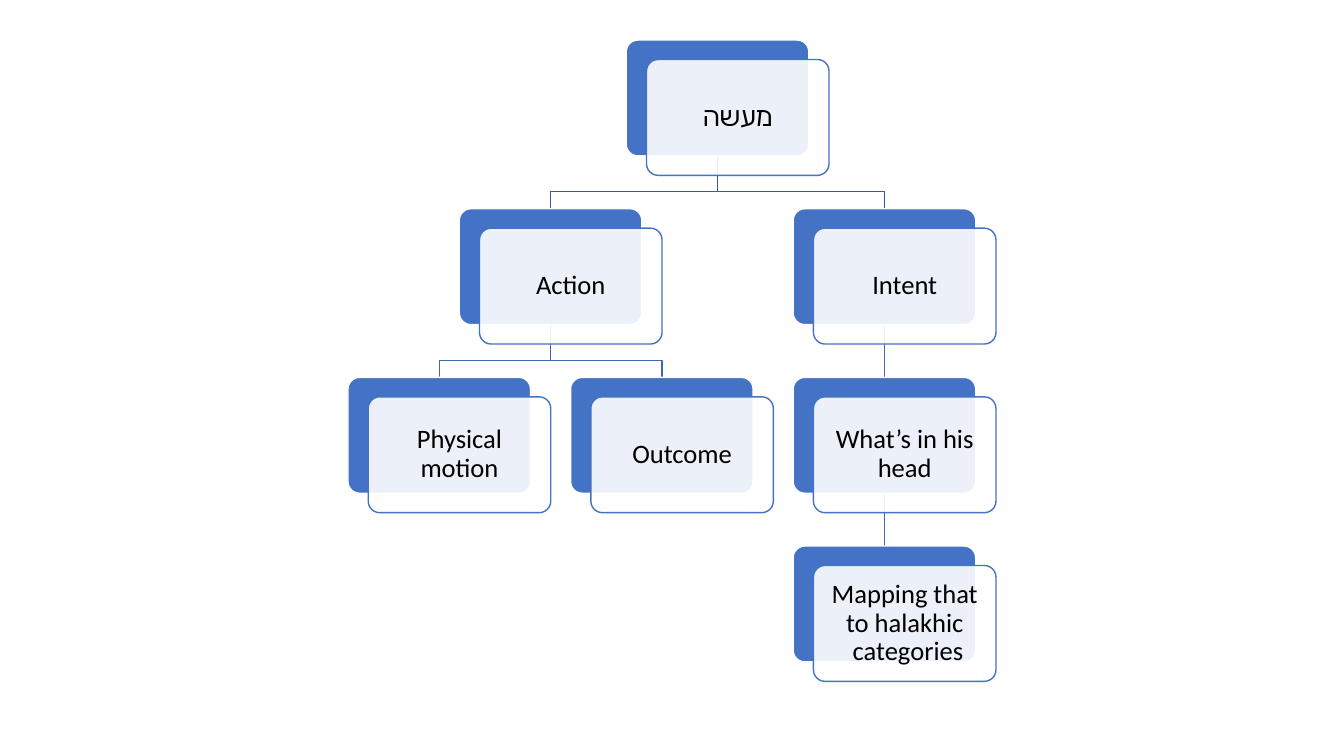
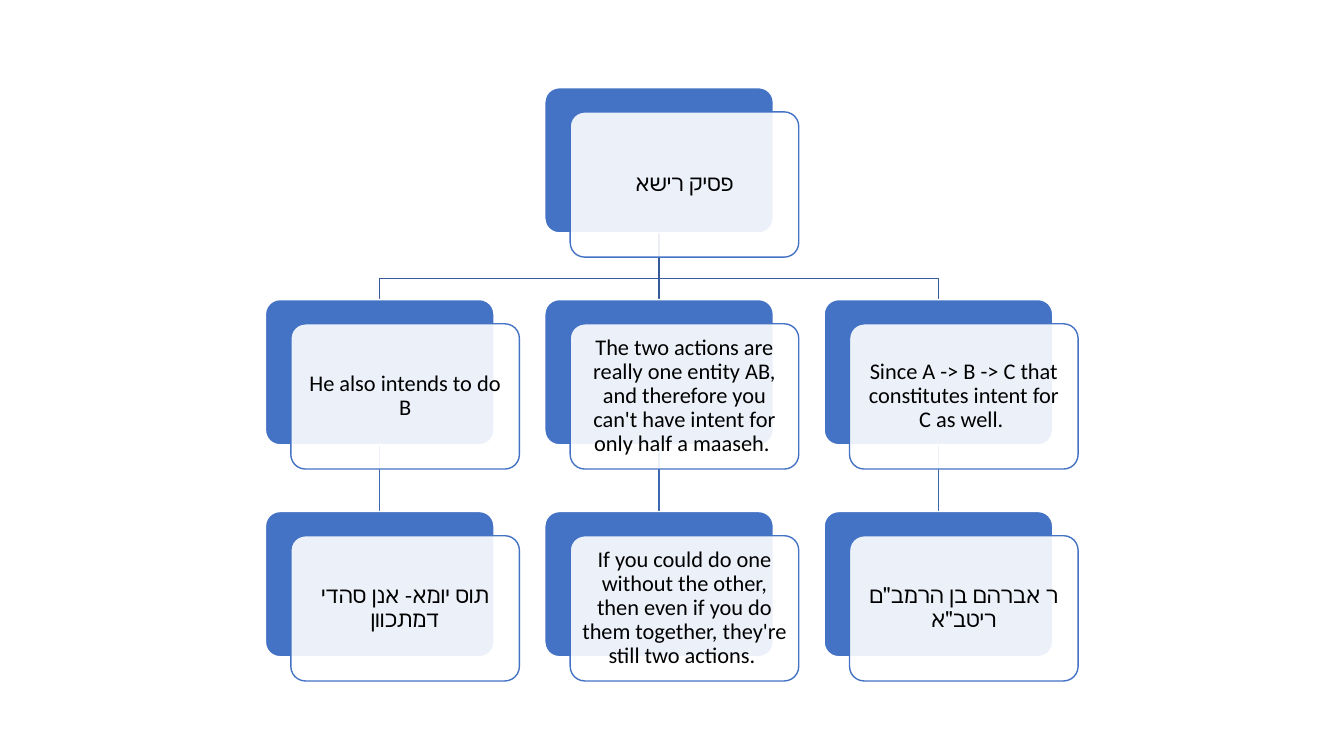
from dataclasses import dataclass
from itertools import count
from typing import Iterator

from pptx import Presentation, util as u
from pptx.dml.color import RGBColor
from pptx.enum import shapes, text
from pptx.oxml import parse_xml
from pptx.oxml.ns import nsdecls, qn

BLUE, WHITE, BLACK = "4472C4", "FFFFFF", "000000"
ROOT_LINK, LOWER_LINK = "365B9D", "3E67B2"
FONT = "Calibri"
BEND = 0.68  # where a link turns, as a share of the gap between rows


@dataclass(frozen=True)
class Node:
    text: str
    children: tuple["Node", ...] = ()


@dataclass(frozen=True)
class Tree:
    """One hierarchy with its measures in centimetres and text size in points."""
    root: Node
    left: float
    top: float
    column_step: float
    row_step: float
    card_width: float
    card_height: float
    shift_x: float
    shift_y: float
    inset: float
    text_size: float
    right_to_left: bool = False


def colour(value: str) -> RGBColor:
    return RGBColor.from_string(value)


def write(shape, words: str, *, size: float, inset: float, right_to_left: bool) -> None:
    frame = shape.text_frame
    frame.word_wrap = True
    frame.vertical_anchor = text.MSO_ANCHOR.MIDDLE
    frame.margin_left = frame.margin_right = u.Cm(inset)
    frame.margin_top = frame.margin_bottom = u.Cm(inset)
    paragraph = frame.paragraphs[0]
    paragraph.text = words
    paragraph.alignment = text.PP_ALIGN.CENTER
    paragraph.line_spacing = 0.9
    if right_to_left:
        paragraph._p.get_or_add_pPr().set("rtl", "1")
    for run in paragraph.runs:
        run.font.name = FONT
        run.font.size = u.Pt(size)
        run.font.color.rgb = colour(BLACK)


def add_card(slide, tree: Tree, left: int, top: int, fill: str, line: str):
    card = slide.shapes.add_shape(
        shapes.MSO_SHAPE.ROUNDED_RECTANGLE, left, top,
        u.Cm(tree.card_width), u.Cm(tree.card_height))
    card.adjustments[0] = 0.1
    card.shadow.inherit = False
    card.fill.solid()
    card.fill.fore_color.rgb = colour(fill)
    card.line.color.rgb = colour(line)
    card.line.width = u.Pt(1)
    return card


def add_node(slide, tree: Tree, words: str, left: int, top: int):
    """Draw a blue card under a translucent text card; return the blue one."""
    back = add_card(slide, tree, left, top, BLUE, WHITE)
    front = add_card(slide, tree, left + u.Cm(tree.shift_x),
                     top + u.Cm(tree.shift_y), WHITE, BLUE)
    fill = front.element.spPr.find(qn("a:solidFill"))
    fill[0].append(parse_xml(f'<a:alpha {nsdecls("a")} val="90000"/>'))
    write(front, words, size=tree.text_size, inset=tree.inset,
          right_to_left=tree.right_to_left)
    return back


def add_link(slide, parent, child, line: str) -> None:
    """Join parent to child behind all cards, bending if they are not aligned."""
    start_x = parent.left + parent.width // 2
    start_y = parent.top + parent.height
    end_x = child.left + child.width // 2
    if start_x == end_x:
        link = slide.shapes.add_connector(
            shapes.MSO_CONNECTOR.STRAIGHT, start_x, start_y, end_x, child.top)
        link.begin_connect(parent, 2)
        link.end_connect(child, 0)
        link.element.spPr.append(parse_xml(f'<a:effectLst {nsdecls("a")}/>'))
    else:
        bend_y = start_y + round((child.top - start_y) * BEND)
        builder = slide.shapes.build_freeform(start_x, start_y)
        builder.add_line_segments(
            [(start_x, bend_y), (end_x, bend_y), (end_x, child.top)], close=False)
        link = builder.convert_to_shape()
        link.fill.background()
        link.shadow.inherit = False
    link.line.color.rgb = colour(line)
    link.line.width = u.Pt(1)
    link.element.getparent().insert(2, link.element)


def add_branch(slide, tree: Tree, node: Node, columns: Iterator[int], row: int = 0):
    """Give each leaf the next column and centre each parent over its children."""
    children = [add_branch(slide, tree, child, columns, row + 1)
                for child in node.children]
    if children:
        left = (children[0].left + children[-1].left) // 2
    else:
        left = u.Cm(tree.left + next(columns) * tree.column_step)
    card = add_node(slide, tree, node.text, left, u.Cm(tree.top + row * tree.row_step))
    for child in children:
        add_link(slide, card, child, LOWER_LINK if row else ROOT_LINK)
    return card


DEED = Node("מעשה", (
    Node("Action", (Node("Physical motion"), Node("Outcome"))),
    Node("Intent", (
        Node("What’s in his head", (Node("Mapping that to halakhic categories "),)),
    )),
))

INEVITABLE_RESULT = Node("פסיק רישא", (
    Node("He also intends to do B", (Node("תוס יומא- אנן סהדי דמתכוון"),)),
    Node("The two actions are really one entity AB, and therefore you can't "
         "have intent for only half a maaseh. ",
         (Node("If you could do one without the other, then even if you do "
               "them together, they're still two actions. "),)),
    Node("Since A -> B -> C that constitutes intent for C as well. ",
         (Node('ר אברהם בן הרמב"ם\nריטב"א'),)),
))

TREES = (
    Tree(DEED, left=8.77, top=1.01, column_step=5.61, row_step=4.25,
         card_width=4.6, card_height=2.92, shift_x=0.51, shift_y=0.49,
         inset=0.2, text_size=19, right_to_left=True),
    Tree(INEVITABLE_RESULT, left=6.69, top=2.21, column_step=7.04, row_step=5.34,
         card_width=5.76, card_height=3.66, shift_x=0.64, shift_y=0.61,
         inset=0.17, text_size=16),
)


def main() -> None:
    presentation = Presentation()
    presentation.slide_width = u.Cm(33.87)
    presentation.slide_height = u.Cm(19.05)
    for tree in TREES:
        slide = presentation.slides.add_slide(presentation.slide_layouts[6])
        add_branch(slide, tree, tree.root, count())
    presentation.save("out.pptx")


if __name__ == "__main__":
    main()
